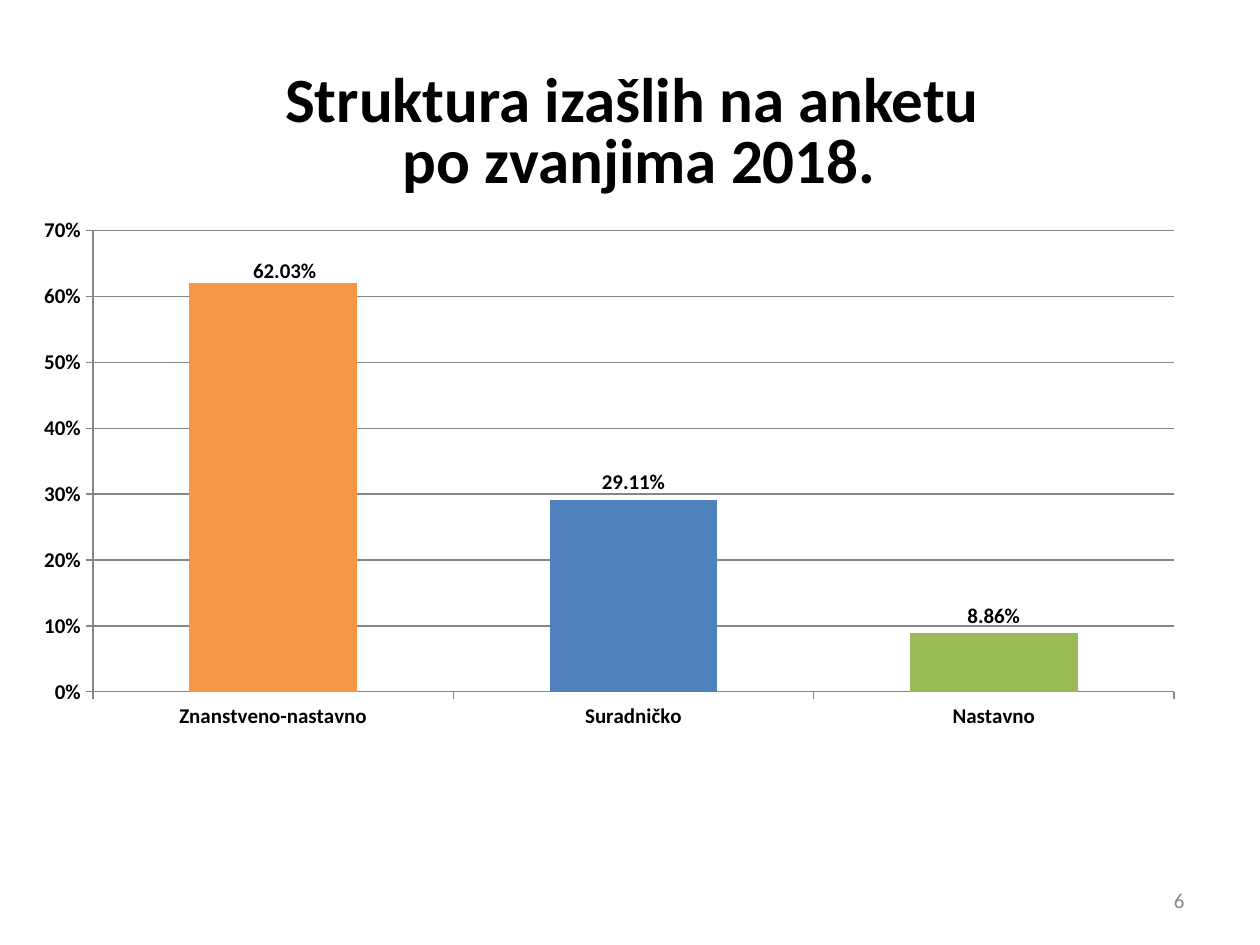
import pptx
import pptx.chart.data
import pptx.dml.color
import pptx.enum.chart
import pptx.enum.text
import pptx.oxml
import pptx.oxml.ns
import pptx.util
from pptx.util import Cm, Pt

BLACK = pptx.dml.color.RGBColor(0x00, 0x00, 0x00)
GREY = pptx.dml.color.RGBColor(0x89, 0x89, 0x89)
LINE_GREY = pptx.dml.color.RGBColor(0x86, 0x86, 0x86)
ORANGE = pptx.dml.color.RGBColor(0xF7, 0x96, 0x46)
BLUE = pptx.dml.color.RGBColor(0x4F, 0x81, 0xBD)
GREEN = pptx.dml.color.RGBColor(0x9B, 0xBB, 0x59)
FONT = "Calibri"

TITLE_LINES = ["Struktura izašlih na anketu ", "po zvanjima 2018."]
SLIDE_NUMBER = "6"
RANKS = [
    ("Znanstveno-nastavno", 0.6203, ORANGE),
    ("Suradničko", 0.2911, BLUE),
    ("Nastavno", 0.0886, GREEN),
]
PLOT_LAYOUT = {"layoutTarget": "inner", "xMode": "edge", "yMode": "edge",
               "x": 0.04, "y": 0.06, "w": 0.94, "h": 0.87}
FIRST_LABEL_SHIFT = {"x": 0.01, "y": 0.01}


def style_font(font, size, color=BLACK, bold=False):
    font.name = FONT
    font.size = Pt(size)
    font.bold = bold
    font.color.rgb = color


def place(shape, left, top, width, height):
    shape.left, shape.top = Cm(left), Cm(top)
    shape.width, shape.height = Cm(width), Cm(height)


def manual_layout(settings):
    """Return a c:layout element holding the given manual settings."""
    items = "".join(f'<c:{name} val="{value}"/>' for name, value in settings.items())
    return pptx.oxml.parse_xml(
        f'<c:layout {pptx.oxml.ns.nsdecls("c")}>'
        f"<c:manualLayout>{items}</c:manualLayout></c:layout>")


def add_title(slide):
    title = slide.shapes.title
    place(title, 2.29, 1.12, 21.2, 3.2)
    frame = title.text_frame
    frame.word_wrap = True
    frame.vertical_anchor = pptx.enum.text.MSO_ANCHOR.MIDDLE
    paragraph = frame.paragraphs[0]
    paragraph.alignment = pptx.enum.text.PP_ALIGN.CENTER
    paragraph.line_spacing = 0.8
    for index, line in enumerate(TITLE_LINES):
        if index:
            paragraph.add_line_break()
        run = paragraph.add_run()
        run.text = line
        style_font(run.font, 36, bold=True)


def add_slide_number(slide):
    box = slide.shapes.add_textbox(Cm(18.21), Cm(17.65), Cm(5.92), Cm(1.01))
    frame = box.text_frame
    frame.word_wrap = True
    frame.vertical_anchor = pptx.enum.text.MSO_ANCHOR.MIDDLE
    paragraph = frame.paragraphs[0]
    paragraph.alignment = pptx.enum.text.PP_ALIGN.RIGHT
    run = paragraph.add_run()
    run.text = SLIDE_NUMBER
    style_font(run.font, 12, GREY)


def style_axis(axis):
    style_font(axis.tick_labels.font, 12, bold=True)
    axis.major_tick_mark = pptx.enum.chart.XL_TICK_MARK.OUTSIDE
    axis.minor_tick_mark = pptx.enum.chart.XL_TICK_MARK.NONE
    axis.format.line.color.rgb = LINE_GREY
    axis.format.line.width = Pt(0.75)


def add_rank_chart(slide):
    data = pptx.chart.data.CategoryChartData(number_format="0.00%")
    data.categories = [name for name, _, _ in RANKS]
    data.add_series("Series 1", [share for _, share, _ in RANKS])
    chart = slide.shapes.add_chart(
        pptx.enum.chart.XL_CHART_TYPE.COLUMN_CLUSTERED,
        Cm(0.89), Cm(4.01), Cm(23.24), Cm(10.69), data).chart
    chart.has_title = False
    chart.has_legend = False
    style_font(chart.font, 10)

    style_axis(chart.category_axis)
    value_axis = chart.value_axis
    style_axis(value_axis)
    value_axis.minimum_scale, value_axis.maximum_scale = 0, 0.7
    value_axis.major_unit = 0.1
    value_axis.tick_labels.number_format = "0%"
    value_axis.tick_labels.number_format_is_linked = False
    value_axis.has_major_gridlines = True
    value_axis.major_gridlines.format.line.color.rgb = LINE_GREY
    value_axis.major_gridlines.format.line.width = Pt(0.75)

    plot = chart.plots[0]
    plot.gap_width = 115
    plot.vary_by_categories = False
    series = plot.series[0]
    series.format.fill.solid()
    series.format.fill.fore_color.rgb = RANKS[0][2]
    for index, (_, _, color) in enumerate(RANKS):
        fill = series.points[index].format.fill
        fill.solid()
        fill.fore_color.rgb = color

    outside = pptx.enum.chart.XL_LABEL_POSITION.OUTSIDE_END
    labels = series.data_labels
    labels.show_value = True
    labels.number_format = "0.00%"
    labels.number_format_is_linked = False
    labels.position = outside
    style_font(labels.font, 12, bold=True)

    first_label = series.points[0].data_label
    style_font(first_label.font, 12, bold=True)
    first_label.position = outside
    label_index = series._element.find(".//" + pptx.oxml.ns.qn("c:dLbl")).find(
        pptx.oxml.ns.qn("c:idx"))
    label_index.addnext(manual_layout(FIRST_LABEL_SHIFT))

    plot_area = chart._chartSpace.chart.plotArea
    for layout in plot_area.findall(pptx.oxml.ns.qn("c:layout")):
        plot_area.remove(layout)
    plot_area.insert(0, manual_layout(PLOT_LAYOUT))


def main():
    presentation = pptx.Presentation()
    presentation.slide_width, presentation.slide_height = Cm(25.4), Cm(19.05)
    title_only = presentation.slide_layouts[5]
    slide = presentation.slides.add_slide(title_only)
    add_title(slide)
    add_slide_number(slide)
    add_rank_chart(slide)
    presentation.save("out.pptx")


if __name__ == "__main__":
    main()
